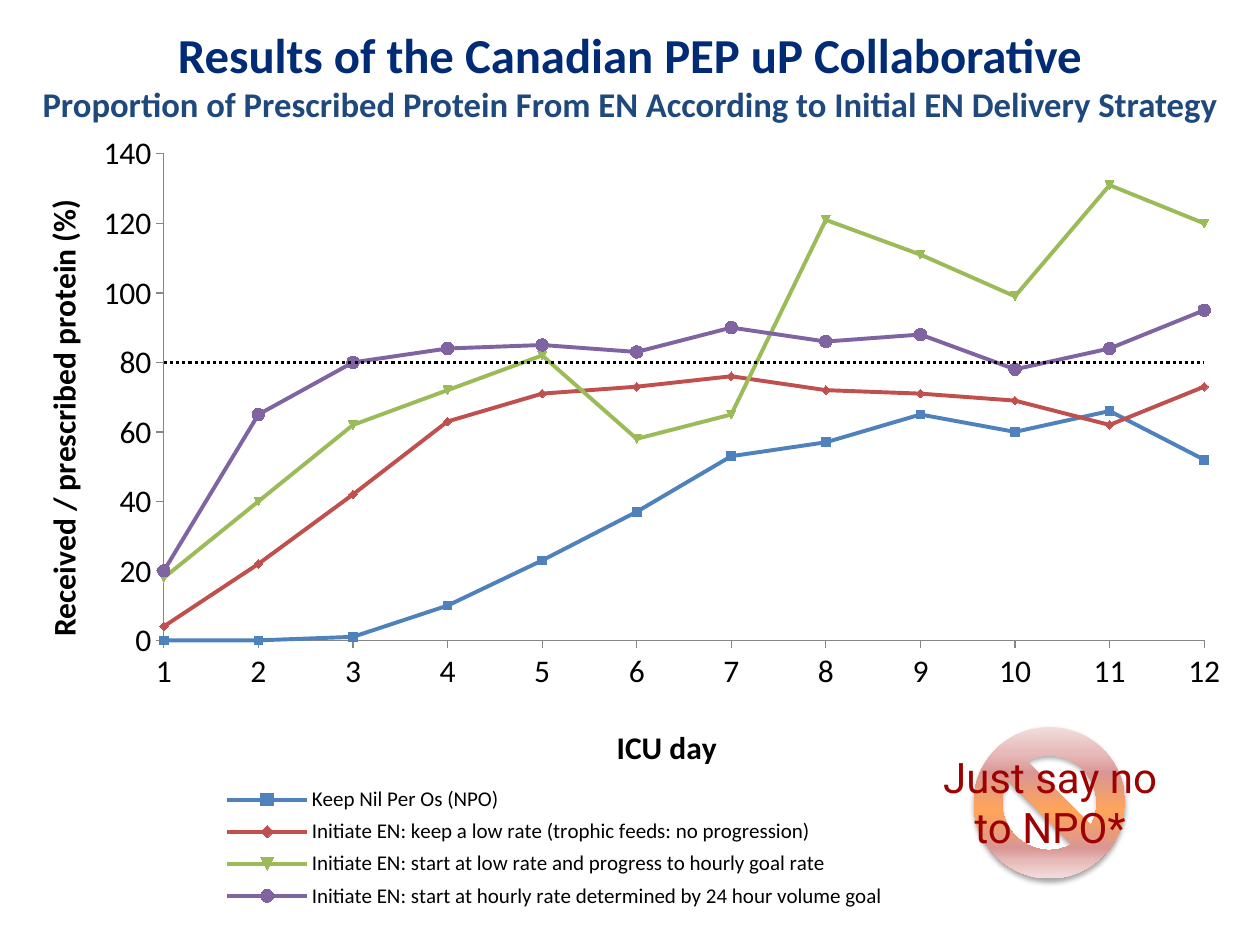
from lxml import etree
from pptx import Presentation
from pptx.chart.data import CategoryChartData
from pptx.dml.color import RGBColor
from pptx.enum.chart import XL_CHART_TYPE as ChartType, XL_LEGEND_POSITION as LegendPosition
from pptx.enum.chart import XL_MARKER_STYLE as MarkerStyle, XL_TICK_MARK as TickMark
from pptx.enum.dml import MSO_LINE_DASH_STYLE as DashStyle
from pptx.enum.shapes import MSO_SHAPE as ShapeType
from pptx.enum.text import MSO_ANCHOR as Anchor, MSO_AUTO_SIZE as AutoSize, PP_ALIGN as Align
from pptx.oxml import parse_xml
from pptx.util import Cm, Pt

DRAWING = 'xmlns:a="http://schemas.openxmlformats.org/drawingml/2006/main"'
CHART = 'xmlns:c="http://schemas.openxmlformats.org/drawingml/2006/chart"'


def color(value):
    return RGBColor.from_string(value)


def layout(position, inner=False):
    tags = "".join(f'<c:{side}Mode val="edge"/>' for side in "xy")
    tags += "".join(f'<c:{side} val="{value}"/>' for side, value in zip("xywh", position))
    target = '<c:layoutTarget val="inner"/>' if inner else ""
    return parse_xml(f"<c:layout {CHART}><c:manualLayout>{target}{tags}</c:manualLayout></c:layout>")


presentation = Presentation()
presentation.slide_width = Cm(25.4)
presentation.slide_height = Cm(19.05)
slide = presentation.slides.add_slide(presentation.slide_layouts[5])

title = slide.shapes.title
title_place = {"left": Cm(0), "top": Cm(1.07), "width": Cm(25.4), "height": Cm(2.11)}
for name, value in title_place.items():
    setattr(title, name, value)
title_frame = title.text_frame
title_format = {"auto_size": AutoSize.NONE, "vertical_anchor": Anchor.MIDDLE, "word_wrap": True,
                "margin_top": Cm(0), "margin_bottom": Cm(1)}
for name, value in title_format.items():
    setattr(title_frame, name, value)
title_lines = [
    ("Results of the Canadian PEP uP Collaborative", 27.9, "012B74", 0.8),
    ("Proportion of Prescribed Protein From EN According to Initial EN Delivery Strategy",
     19.8, "1F497D", 1.0),
]
title_frame.text = "\n".join(line[0] for line in title_lines)
for paragraph, (_, size, shade, spacing) in zip(title_frame.paragraphs, title_lines):
    paragraph.alignment = Align.CENTER
    paragraph.line_spacing = spacing
    paragraph.space_before = Pt(0)
    font = paragraph.runs[0].font
    for name, value in {"name": "Calibri", "size": Pt(size), "bold": True}.items():
        setattr(font, name, value)
    font.color.rgb = color(shade)

strategies = [
    ("Keep Nil Per Os (NPO) ", "4F81BD", [0, 0, 1, 10, 23, 37, 53, 57, 65, 60, 66, 52]),
    ("Initiate EN: keep a low rate (trophic feeds: no progression) ", "C0504D",
     [4, 22, 42, 63, 71, 73, 76, 72, 71, 69, 62, 73]),
    ("Initiate EN: start at low rate and progress to hourly goal rate ", "9BBB59",
     [18, 40, 62, 72, 82, 58, 65, 121, 111, 99, 131, 120]),
    ("Initiate EN: start at hourly rate determined by 24 hour volume goal ", "8064A2",
     [20, 65, 80, 84, 85, 83, 90, 86, 88, 78, 84, 95]),
    ("Series 5", "000000", [80] * 12),
]
chart_data = CategoryChartData()
chart_data.categories = [str(day) for day in range(1, 13)]
for name, _, values in strategies:
    chart_data.add_series(name, values)
chart = slide.shapes.add_chart(ChartType.LINE_MARKERS, Cm(0.43), Cm(2.54), Cm(24.56), Cm(16.08),
                               chart_data).chart
chart.has_title = False
chart.font.name = "Calibri"
chart.font.size = Pt(18)
chart.font.color.rgb = color("000000")

plot = chart.plots[0]
plot.vary_by_categories = False
for series, (_, shade, _) in zip(plot.series, strategies):
    series.smooth = False
    series.format.line.color.rgb = color(shade)
    series.format.line.width = Pt(2.25)
    series.marker.size = 5
    series.marker.format.fill.solid()
    series.marker.format.fill.fore_color.rgb = color(shade)
    series.marker.format.line.color.rgb = color(shade)
goal_rate, target = plot.series[3], plot.series[4]
goal_rate.marker.style = MarkerStyle.CIRCLE
goal_rate.marker.size = 7
target.marker.style = MarkerStyle.NONE
target.format.line.width = Pt(1.75)
target.format.line.dash_style = DashStyle.ROUND_DOT

axes = [
    (chart.category_axis, "ICU day", (0.484, 0.745)),
    (chart.value_axis, "Received / prescribed protein (%)", (0.012, 0.085)),
]
for axis, caption, position in axes:
    axis.has_major_gridlines = False
    axis.major_tick_mark = TickMark.OUTSIDE
    axis.format.line.color.rgb = color("868686")
    axis_title = axis.axis_title
    axis_title.text_frame.text = caption
    font = axis_title.text_frame.paragraphs[0].runs[0].font
    for name, value in {"name": "Calibri", "size": Pt(18), "bold": True}.items():
        setattr(font, name, value)
    font.color.rgb = color("000000")
    title_xml = axis_title._element
    for old in title_xml.xpath("c:layout"):
        title_xml.remove(old)
    title_xml.xpath("c:tx")[0].addnext(layout(position))
value_axis = chart.value_axis
for name, value in {"minimum_scale": 0, "maximum_scale": 140, "major_unit": 20}.items():
    setattr(value_axis, name, value)
value_axis_xml = value_axis._element
for old in value_axis_xml.xpath("c:crossBetween"):
    value_axis_xml.remove(old)
value_axis_xml.xpath("c:crossAx | c:crosses")[-1].addnext(
    parse_xml(f'<c:crossBetween {CHART} val="midCat"/>'))

chart.has_legend = True
legend = chart.legend
legend.position = LegendPosition.BOTTOM
legend.include_in_layout = False
legend.font.size = Pt(12)
legend_xml = legend._element
for old in legend_xml.xpath("c:layout"):
    legend_xml.remove(old)
hidden_entry = parse_xml(
    f'<c:legendEntry {CHART}><c:idx val="4"/><c:delete val="1"/></c:legendEntry>')
legend_xml.xpath("c:legendPos")[0].addnext(hidden_entry)
hidden_entry.addnext(layout((0.16, 0.82, 0.56, 0.17)))
plot_area = chart._chartSpace.xpath("c:chart/c:plotArea")[0]
for old in plot_area.xpath("c:layout"):
    plot_area.remove(old)
plot_area.insert(0, layout((0.117, 0.035, 0.854, 0.61), inner=True))

sign = slide.shapes.add_shape(ShapeType.NO_SYMBOL, Cm(19.63), Cm(14.66), Cm(3.05), Cm(3.05))
sign.line.fill.background()
stops = [(0, "F2DCDB"), (18, "E6B9B8"), (30, "D99694"), (55, "FFA459"),
         (80, "D99694"), (88, "E6B9B8"), (100, "F2DCDB")]
stop_xml = "".join(f'<a:gs pos="{place * 1000}"><a:srgbClr val="{shade}"/></a:gs>'
                   for place, shade in stops)
sign_xml = sign._element.spPr
sign_xml.xpath("a:prstGeom")[0].addnext(parse_xml(
    f'<a:gradFill {DRAWING} rotWithShape="1"><a:gsLst>{stop_xml}</a:gsLst>'
    '<a:lin ang="5400000" scaled="0"/></a:gradFill>'))
sign_xml.append(parse_xml(
    f'<a:effectLst {DRAWING}><a:outerShdw blurRad="{Pt(3.1)}" dist="{Pt(1.8)}" dir="5400000" '
    'rotWithShape="0"><a:srgbClr val="000000"><a:alpha val="35000"/></a:srgbClr>'
    '</a:outerShdw></a:effectLst>'))

slogan = slide.shapes.add_textbox(Cm(18.21), Cm(15.04), Cm(5.92), Cm(2.29))
slogan_frame = slogan.text_frame
slogan_format = {"word_wrap": True, "margin_left": Cm(0.23), "margin_right": Cm(0.23),
                 "margin_top": Cm(0.1), "margin_bottom": Cm(0.1)}
for name, value in slogan_format.items():
    setattr(slogan_frame, name, value)
slogan_frame.text = "Just say no\nto NPO*"
for paragraph in slogan_frame.paragraphs:
    paragraph.alignment = Align.CENTER
    run = paragraph.runs[0]
    run.font.name = "Roboto"
    run.font.size = Pt(24)
    run.font.color.rgb = color("9D0101")
    outline = etree.fromstring(
        f'<a:ln {DRAWING} w="{Pt(0.75)}"><a:solidFill><a:srgbClr val="FF0000"/></a:solidFill></a:ln>')
    run._r.get_or_add_rPr().insert(0, outline)

presentation.save("out.pptx")
